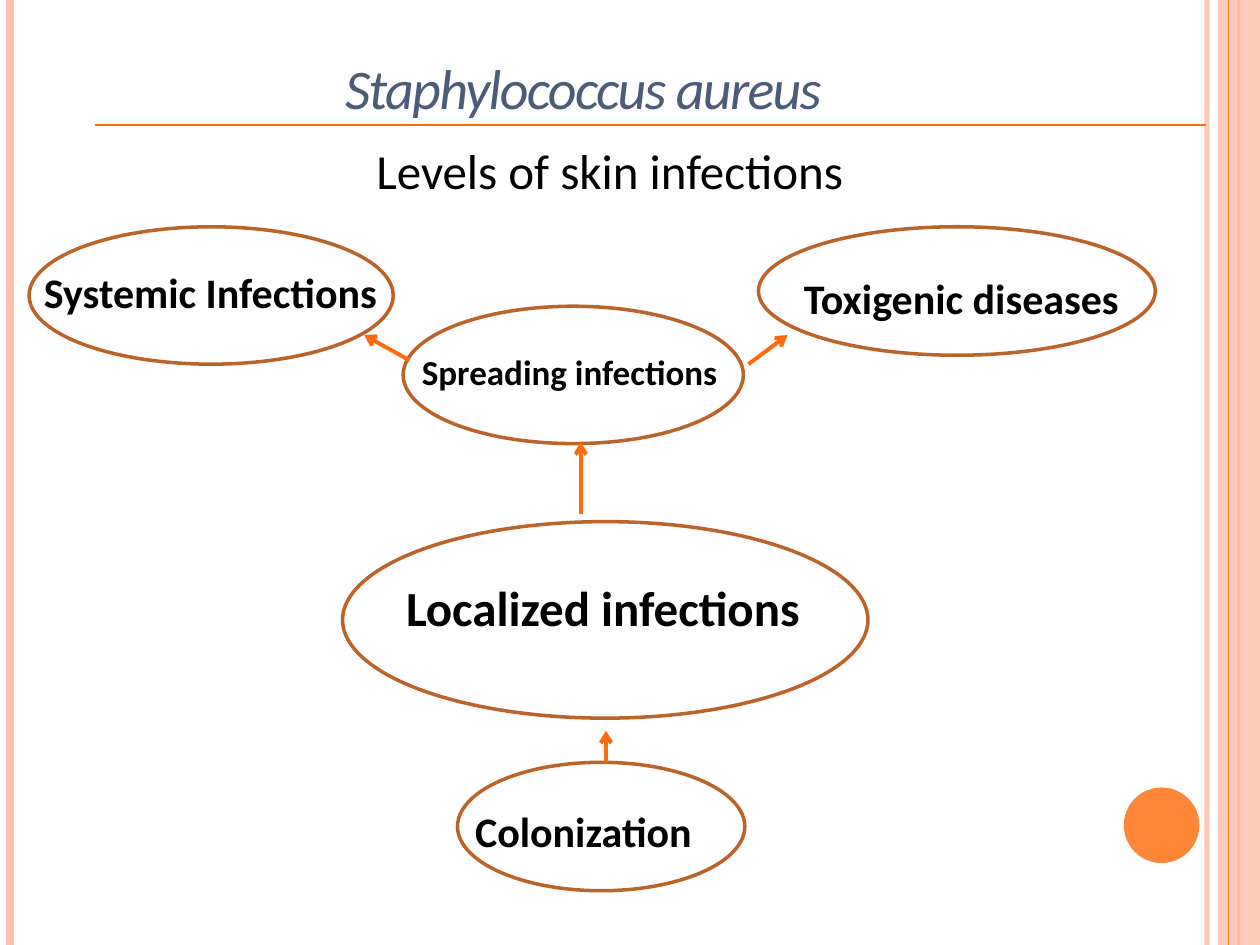
from lxml.etree import SubElement
from pptx import Presentation
from pptx.dml.color import RGBColor
from pptx.enum.shapes import MSO_CONNECTOR, MSO_SHAPE
from pptx.enum.text import MSO_ANCHOR, PP_ALIGN
from pptx.oxml.ns import qn
from pptx.util import Pt

ORANGE = "FE8637"
PEACH = "FEC3AE"
ACCENT = "FF6B0A"
OUTLINE = "BC6329"
BLACK = "000000"
TITLE_COLOR = "4C5C78"

STAGES = [
    ("Colonization", 24, (261.4, 435.6, 164.2, 73.4), (256.4, 456.5, 154, 36), PP_ALIGN.CENTER),
    ("Toxigenic diseases", 24, (433.4, 129.6, 226.8, 73.4), (452.2, 151.9, 220, 36), PP_ALIGN.LEFT),
    ("Localized infections", 28, (195.8, 298.1, 300.2, 112.3), (220, 326.2, 249, 75), PP_ALIGN.CENTER),
    ("Systemic Infections", 24, (16.6, 129.6, 208.1, 78.5), (0, 149, 240.5, 36), PP_ALIGN.CENTER),
    ("Spreading infections", 20, (230.4, 175, 194.4, 78.5), (234, 196.6, 201, 31.7), PP_ALIGN.LEFT),
]

ARROWS = [
    (346.3, 435.6, 346.3, 417.6),
    (331.9, 293.8, 331.9, 252.7),
    (234, 205.9, 208.1, 191.5),
    (427.7, 208.1, 450, 191.5),
]


def color(value):
    return RGBColor.from_string(value)


def points(values):
    return [Pt(value) for value in values]


def set_opacity(shape, percent):
    fill_color = next(shape._element.spPr.iter(qn("a:srgbClr")))
    SubElement(fill_color, qn("a:alpha"), val=str(percent * 1000))


def add_line(slide, ends, line_color, width):
    line = slide.shapes.add_connector(MSO_CONNECTOR.STRAIGHT, *points(ends))
    line.line.color.rgb = color(line_color)
    line.line.width = Pt(width)
    SubElement(line._element.spPr, qn("a:effectLst"))
    return line


def add_arrow(slide, ends):
    arrow = add_line(slide, ends, ACCENT, 2.25)
    SubElement(arrow.line._get_or_add_ln(), qn("a:tailEnd"), type="arrow")


def add_filled_shape(slide, kind, box, fill_color):
    shape = slide.shapes.add_shape(kind, *points(box))
    shape.shadow.inherit = False
    shape.fill.solid()
    shape.fill.fore_color.rgb = color(fill_color)
    shape.line.fill.background()
    return shape


def add_outlined_ellipse(slide, box):
    shape = slide.shapes.add_shape(MSO_SHAPE.OVAL, *points(box))
    shape.shadow.inherit = False
    shape.fill.background()
    shape.line.color.rgb = color(OUTLINE)
    shape.line.width = Pt(2)


def write_text(shape, text, size, text_color, alignment=PP_ALIGN.LEFT, bold=False):
    shape.text_frame.word_wrap = True
    paragraph = shape.text_frame.paragraphs[0]
    paragraph.alignment = alignment
    run = paragraph.add_run()
    run.text = text
    run.font.name = "Calibri"
    run.font.size = Pt(size)
    run.font.bold = bold
    run.font.color.rgb = color(text_color)
    return run


def add_label(slide, box, text, size, alignment=PP_ALIGN.LEFT, bold=False):
    label = slide.shapes.add_textbox(*points(box))
    write_text(label, text, size, BLACK, alignment, bold)


def add_title(slide, box, text):
    title = slide.shapes.title
    title.left, title.top, title.width, title.height = points(box)
    title.text_frame.vertical_anchor = MSO_ANCHOR.MIDDLE
    run = write_text(title, text, 32, TITLE_COLOR)
    run.font.italic = True
    run._r.get_or_add_rPr().set("spc", "-100")


def add_side_decoration(slide):
    inner_line = add_line(slide, (689.8, 0, 689.8, 540), PEACH, 3)
    set_opacity(inner_line, 93)
    add_line(slide, (5.8, 0, 5.8, 540), PEACH, 4.5)
    add_line(slide, (707.8, 0, 707.8, 540), ORANGE, 1.5)
    band = add_filled_shape(slide, MSO_SHAPE.RECTANGLE, (696, 0, 24, 540), PEACH)
    set_opacity(band, 87)
    add_line(slide, (702, 0, 702, 540), ORANGE, 0.75)
    add_filled_shape(slide, MSO_SHAPE.OVAL, (642.2, 450, 43.2, 43.2), ORANGE)


def main():
    presentation = Presentation()
    presentation.slide_width = Pt(720)
    presentation.slide_height = Pt(540)
    slide = presentation.slides.add_slide(presentation.slide_layouts[5])
    add_side_decoration(slide)
    add_title(slide, (190, 26, 368.6, 48), "Staphylococcus aureus")
    add_line(slide, (54, 71.3, 689, 71.3), ACCENT, 1)
    add_label(slide, (208, 77, 291, 41), "Levels of skin infections", 28)
    for text, size, ellipse_box, label_box, alignment in STAGES:
        add_outlined_ellipse(slide, ellipse_box)
        add_label(slide, label_box, text, size, alignment, bold=True)
    for ends in ARROWS:
        add_arrow(slide, ends)
    presentation.save("out.pptx")


if __name__ == "__main__":
    main()
